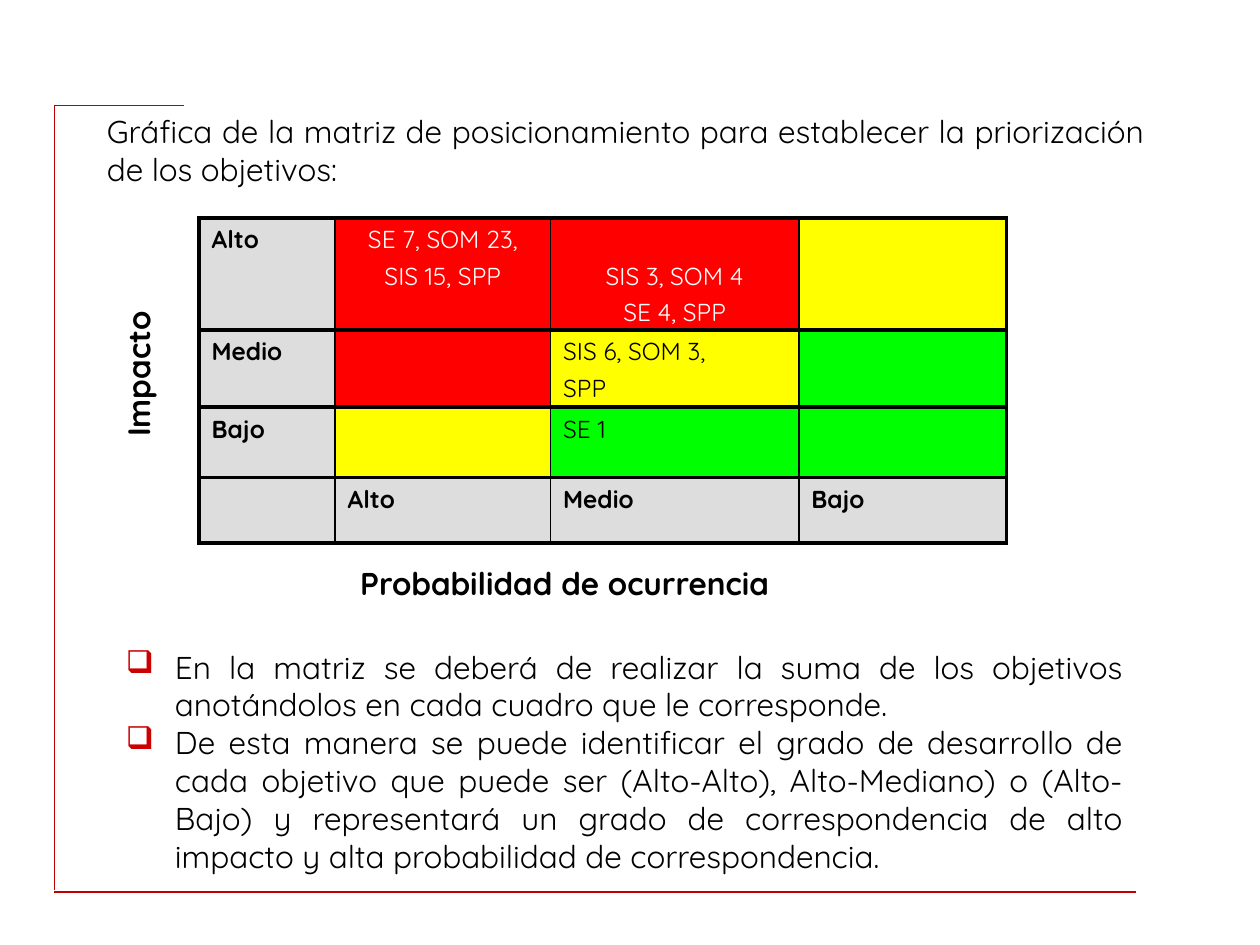
from lxml import etree
from pptx import Presentation
from pptx.dml.color import RGBColor
from pptx.enum.shapes import MSO_CONNECTOR
from pptx.enum.text import MSO_ANCHOR, PP_ALIGN
from pptx.oxml import parse_xml
from pptx.oxml.ns import nsdecls, qn
from pptx.util import Inches, Pt

COLORS = {
    "rule": "C00000", "bullet": "CC0000", "black": "000000", "white": "FFFFFF",
    "grey": "DDDDDD", "red": "FF0000", "yellow": "FFFF00", "green": "00FF00",
}
FONT = "Quicksand"
THIN, THICK = 1, 2.25

COLUMN_WIDTHS = [1.08, 1.71, 1.97, 1.65]
ROW_HEIGHTS = [0.89, 0.61, 0.56, 0.52]
MATRIX = [
    [("grey", ["Alto"]), ("red", ["SE 7, SOM 23,", "SIS 15, SPP"]),
     ("red", ["SIS 3, SOM 4", "SE 4, SPP"]), ("yellow", [])],
    [("grey", ["Medio"]), ("red", []),
     ("yellow", ["SIS 6, SOM 3,", "SPP"]), ("green", [])],
    [("grey", ["Bajo"]), ("yellow", []), ("green", ["SE 1"]), ("green", [])],
    [("grey", []), ("grey", ["Alto"]), ("grey", ["Medio"]), ("grey", ["Bajo"])],
]
INTRO = ("Gráfica de la matriz de posicionamiento para establecer "
         "la priorización de los objetivos:")
NOTES = [
    "En la matriz se deberá de realizar la suma de los objetivos "
    "anotándolos en cada cuadro que le corresponde.",
    "De esta manera se puede identificar el grado de desarrollo de cada objetivo "
    "que puede ser (Alto-Alto), Alto-Mediano) o (Alto-Bajo) y representará un grado "
    "de correspondencia de alto impacto y alta probabilidad de correspondencia.",
]


def rgb(name):
    return RGBColor.from_string(COLORS[name])


def style(paragraph, size, color="black", bold=False, align=PP_ALIGN.LEFT):
    paragraph.alignment = align
    font = paragraph.font
    font.name, font.size, font.bold = FONT, Pt(size), bold
    font.color.rgb = rgb(color)


def add_bullet(paragraph):
    props = paragraph._p.get_or_add_pPr()
    props.set("marL", str(Inches(0.39)))
    props.set("indent", str(-Inches(0.39)))
    props.append(parse_xml(
        f'<a:buClr {nsdecls("a")}><a:srgbClr val="{COLORS["bullet"]}"/></a:buClr>'))
    props.append(parse_xml(f'<a:buChar {nsdecls("a")} char="❑"/>'))


def add_text(slide, box, lines, bold=False, align=PP_ALIGN.LEFT, wrap=True, bullets=False):
    text_box = slide.shapes.add_textbox(*map(Inches, box))
    frame = text_box.text_frame
    frame.word_wrap = wrap
    for index, line in enumerate(lines):
        paragraph = frame.paragraphs[0] if index == 0 else frame.add_paragraph()
        paragraph.text = line
        if bullets:
            add_bullet(paragraph)
        style(paragraph, 18, bold=bold, align=align)
    return text_box


def add_frame(slide, left, top, width, height):
    bottom = top + height
    rules = [
        (left + 1.03, top, left, top),
        (left, top, left, bottom - 0.02),
        (left, bottom, left + width, bottom),
    ]
    for ends in rules:
        rule = slide.shapes.add_connector(MSO_CONNECTOR.STRAIGHT, *map(Inches, ends))
        rule.line.color.rgb = rgb("rule")
        rule.line.width = Pt(0.75)
        etree.SubElement(rule._element.spPr, qn("a:effectLst"))


def set_borders(cell, widths):
    props = cell._tc.get_or_add_tcPr()
    for position, (side, width) in enumerate(widths.items()):
        props.insert(position, parse_xml(
            f'<a:{side} {nsdecls("a")} w="{Pt(width)}"><a:solidFill>'
            f'<a:srgbClr val="{COLORS["black"]}"/></a:solidFill></a:{side}>'))


def fill_cell(cell, color, lines):
    cell.fill.solid()
    cell.fill.fore_color.rgb = rgb(color)
    for index, line in enumerate(lines):
        frame = cell.text_frame
        paragraph = frame.paragraphs[0] if index == 0 else frame.add_paragraph()
        paragraph.text = line
        if index:
            paragraph.space_before = Pt(3.2)
        on_red = color == "red"
        style(paragraph, 14, "white" if on_red else "black", color == "grey",
              PP_ALIGN.CENTER if on_red else PP_ALIGN.LEFT)


def add_matrix(slide, left, top):
    size = (sum(COLUMN_WIDTHS), sum(ROW_HEIGHTS))
    matrix = slide.shapes.add_table(
        len(ROW_HEIGHTS), len(COLUMN_WIDTHS), *map(Inches, (left, top, *size))).table
    matrix.first_row = matrix.horz_banding = False
    for column, width in zip(matrix.columns, COLUMN_WIDTHS):
        column.width = Inches(width)
    for row, height in zip(matrix.rows, ROW_HEIGHTS):
        row.height = Inches(height)
    last = len(COLUMN_WIDTHS) - 1
    for r, row in enumerate(MATRIX):
        for c, (color, lines) in enumerate(row):
            cell = matrix.cell(r, c)
            fill_cell(cell, color, lines)
            set_borders(cell, {
                "lnL": THICK if c == 0 else THIN,
                "lnR": THICK if c == last else THIN,
                "lnT": THICK,
                "lnB": THICK,
            })
    high_medium = matrix.cell(0, 2)
    high_medium.vertical_anchor = MSO_ANCHOR.BOTTOM
    high_medium.margin_bottom = Inches(0.02)


def add_chart_region(slide, left, top):
    add_matrix(slide, left, top)
    impact = add_text(slide, (left - 1.1, top + 1.02, 1.23, 0.4),
                      ["Impacto"], bold=True, wrap=False)
    impact.rotation = 270
    add_text(slide, (left + 1.18, top + 2.7, 3.54, 0.4),
             ["Probabilidad de ocurrencia"], bold=True, wrap=False)


def main():
    deck = Presentation()
    deck.slide_width, deck.slide_height = Inches(10), Inches(7.5)
    slide = deck.slides.add_slide(deck.slide_layouts[6])
    add_frame(slide, 0.43, 0.84, 8.59, 6.24)
    add_text(slide, (0.75, 0.84, 8.43, 0.7), [INTRO], align=PP_ALIGN.JUSTIFY)
    add_text(slide, (0.9, 5.09, 8.11, 1.9), NOTES, align=PP_ALIGN.JUSTIFY, bullets=True)
    add_chart_region(slide, 1.58, 1.73)
    deck.save("out.pptx")


if __name__ == "__main__":
    main()
